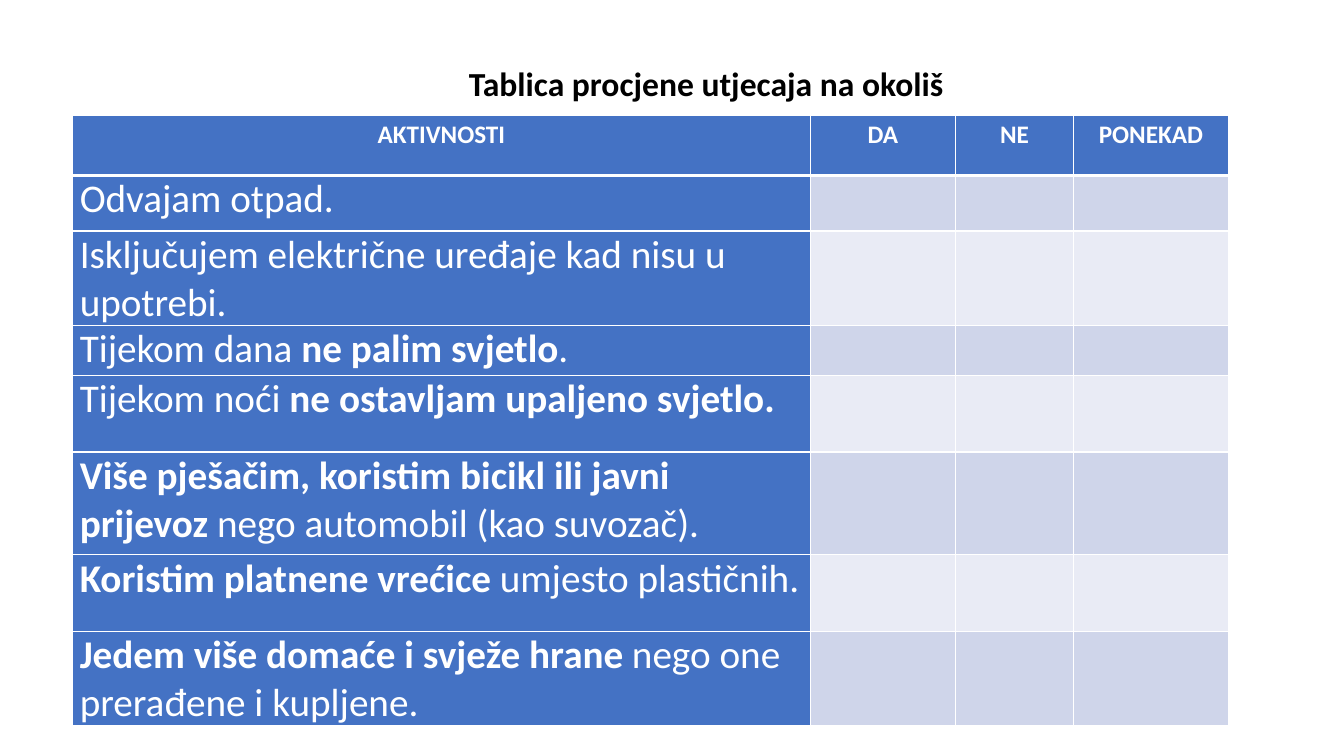
from lxml import etree
from pptx import Presentation
from pptx.dml.color import RGBColor
from pptx.enum.text import MSO_ANCHOR, MSO_AUTO_SIZE, PP_ALIGN
from pptx.oxml.ns import qn
from pptx.util import Cm, Pt

CENTER, LEFT = PP_ALIGN.CENTER, PP_ALIGN.LEFT
TOP = MSO_ANCHOR.TOP
GROW = MSO_AUTO_SIZE.SHAPE_TO_FIT_TEXT
TITLE_ONLY = 5

COLORS = {
    "text": "000000",
    "white": "FFFFFF",
    "accent": "4472C4",
    "odd": "CFD5EA",
    "even": "E9EBF5",
}

COLUMN_WIDTHS = [18.59, 3.66, 2.97, 3.91]
ROW_HEIGHTS = [1.52, 1.4, 1.93, 1.27, 1.93, 2.59, 1.93, 1.93]
HEADINGS = ["AKTIVNOSTI", "DA", "NE", "PONEKAD"]

# Each activity is a list of (text, bold) runs.
ACTIVITIES = [
    [("Odvajam otpad.", False)],
    [("Isključujem električne uređaje kad nisu u upotrebi.", False)],
    [("Tijekom dana ", False), ("ne palim svjetlo", True), (".", False)],
    [("Tijekom noći ", False), ("ne ostavljam upaljeno svjetlo.", True)],
    [("Više pješačim, koristim bicikl ili javni prijevoz ", True),
     ("nego automobil (kao suvozač).", False)],
    [("Koristim platnene vrećice ", True), ("umjesto plastičnih.", False)],
    [("Jedem više domaće i svježe hrane ", True),
     ("nego one prerađene i kupljene.", False)],
]


class SlideBuilder:
    font = "Calibri"

    def __init__(self, page):
        self.page = page

    def add_runs(self, para, runs, size, color, align=LEFT):
        para.alignment = align
        for text, bold in runs:
            span = para.add_run()
            span.text = text
            span.font.name = self.font
            span.font.size = Pt(size)
            span.font.bold = bold
            span.font.color.rgb = RGBColor.from_string(COLORS[color])

    def title(self, text, left, top, width, height):
        box = self.page.shapes.title
        box.left, box.top = Cm(left), Cm(top)
        box.width, box.height = Cm(width), Cm(height)
        frame = box.text_frame
        frame.word_wrap = False
        frame.auto_size = GROW
        frame.vertical_anchor = TOP
        self.add_runs(frame.paragraphs[0], [(text, True)], 24, "text")

    def table(self, left, top, widths, heights):
        frame = self.page.shapes.add_table(
            len(heights), len(widths), Cm(left), Cm(top),
            Cm(sum(widths)), Cm(sum(heights)))
        table = frame.table
        for column, width in zip(table.columns, widths):
            column.width = Cm(width)
        for row, height in zip(table.rows, heights):
            row.height = Cm(height)
        return table

    def borders(self, cell, **points):
        """Draw white borders of 1 pt, or as given by side letter (L, R, T, B)."""
        properties = cell._tc.get_or_add_tcPr()
        for side in "LRTB":
            line = etree.SubElement(properties, qn(f"a:ln{side}"),
                                    w=str(Pt(points.get(side, 1))))
            fill = etree.SubElement(line, qn("a:solidFill"))
            etree.SubElement(fill, qn("a:srgbClr"), val=COLORS["white"])

    def cell(self, cell, fill, runs=(), size=28, align=LEFT, spacing=None, **points):
        self.borders(cell, **points)
        cell.fill.solid()
        cell.fill.fore_color.rgb = RGBColor.from_string(COLORS[fill])
        if runs:
            cell.margin_left = cell.margin_right = Cm(0.18)
            cell.margin_top = cell.margin_bottom = 0
            para = cell.text_frame.paragraphs[0]
            para.line_spacing = spacing
            self.add_runs(para, runs, size, "white", align)


def main():
    deck = Presentation()
    deck.slide_width, deck.slide_height = Cm(33.87), Cm(19.05)
    page = deck.slides.add_slide(deck.slide_layouts[TITLE_ONLY])
    builder = SlideBuilder(page)

    builder.title("Tablica procjene utjecaja na okoliš", 11.56, 1.47, 12.6, 1.28)
    table = builder.table(1.83, 2.9, COLUMN_WIDTHS, ROW_HEIGHTS)
    for column, heading in enumerate(HEADINGS):
        builder.cell(table.cell(0, column), "accent", [(heading, True)],
                     size=18, align=CENTER, spacing=1.15, B=3)
    for row, runs in enumerate(ACTIVITIES, start=1):
        top_line = 3 if row == 1 else 1
        band = "odd" if row % 2 else "even"
        builder.cell(table.cell(row, 0), "accent", runs, T=top_line)
        for column in range(1, len(HEADINGS)):
            builder.cell(table.cell(row, column), band, T=top_line)

    deck.save("out.pptx")


if __name__ == "__main__":
    main()
